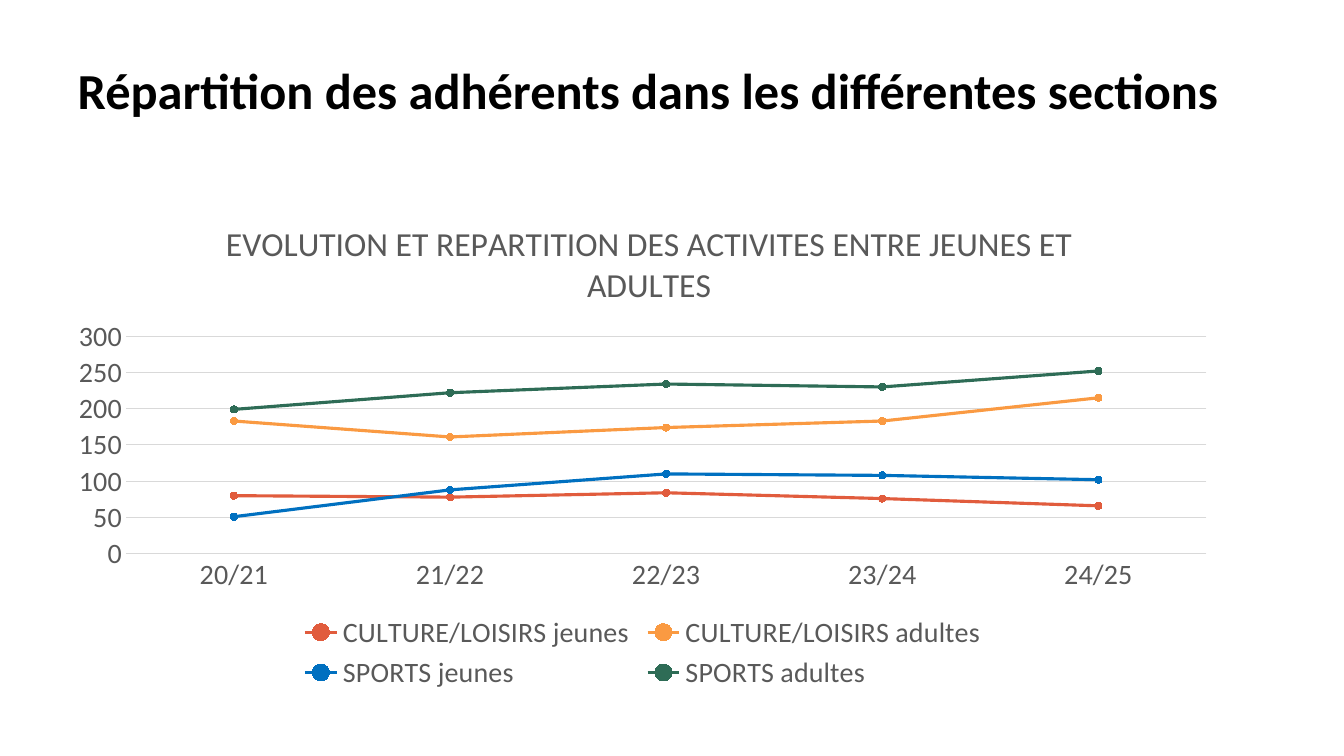
from dataclasses import dataclass

from pptx import Presentation
from pptx.chart.data import CategoryChartData
from pptx.dml.color import RGBColor
from pptx.enum.chart import XL_CHART_TYPE as ChartType
from pptx.enum.chart import XL_LEGEND_POSITION as LegendPosition
from pptx.enum.chart import XL_MARKER_STYLE as MarkerStyle
from pptx.enum.chart import XL_TICK_MARK as TickMark
from pptx.enum.text import MSO_ANCHOR as Anchor
from pptx.enum.text import PP_ALIGN as Align
from pptx.oxml import parse_xml
from pptx.oxml.ns import nsdecls, qn
from pptx.util import Inches, Pt


@dataclass(frozen=True)
class Theme:
    """Hold the colours and type sizes of the slide."""
    font: str = "Calibri"
    black: str = "000000"
    grey: str = "595959"
    grid: str = "D9D9D9"
    title_size: int = 36
    chart_title_size: int = 24
    label_size: int = 20


THEME = Theme()
SEASONS = ["20/21", "21/22", "22/23", "23/24", "24/25"]
SECTIONS = [
    ("CULTURE/LOISIRS jeunes", (80, 78, 84, 76, 66), "E15C3D"),
    ("CULTURE/LOISIRS adultes", (183, 161, 174, 183, 215), "FA9A42"),
    ("SPORTS jeunes", (51, 88, 110, 108, 102), "0070C0"),
    ("SPORTS adultes", (199, 222, 234, 230, 252), "2E6C56"),
]


def style_font(font, size, color, bold=False):
    """Apply the theme typeface with a size, colour and weight."""
    font.name = THEME.font
    font.size = Pt(size)
    font.bold = bold
    font.color.rgb = RGBColor.from_string(color)


def write_text(frame, text, *, size, color, bold=False, align=Align.LEFT, spacing=None):
    """Write one formatted paragraph into a text frame."""
    paragraph = frame.paragraphs[0]
    paragraph.alignment = align
    paragraph.line_spacing = spacing
    run = paragraph.add_run()
    run.text = text
    style_font(run.font, size, color, bold)


def style_line(line, color, width):
    """Give a line a solid colour and a width in points."""
    line.color.rgb = RGBColor.from_string(color)
    line.width = Pt(width)


def place_part(element, index, **fractions):
    """Position a chart part by fractions of the chart area."""
    for layout in element.findall(qn("c:layout")):
        element.remove(layout)
    target = '<c:layoutTarget val="inner"/>' if "w" in fractions else ""
    modes = '<c:xMode val="edge"/><c:yMode val="edge"/>'
    sizes = "".join(f'<c:{name} val="{value}"/>' for name, value in fractions.items())
    element.insert(index, parse_xml(
        f'<c:layout {nsdecls("c")}><c:manualLayout>{target}{modes}{sizes}'
        "</c:manualLayout></c:layout>"))


def add_title(slide, text):
    """Move and fill the title placeholder."""
    title = slide.shapes.title
    title.left, title.top = Inches(0.67), Inches(0.6)
    title.width, title.height = Inches(11.65), Inches(1.24)
    frame = title.text_frame
    frame.word_wrap = True
    frame.vertical_anchor = Anchor.TOP
    write_text(frame, text, size=THEME.title_size, color=THEME.black, bold=True, spacing=0.9)


def style_axes(chart):
    """Format both axes and the horizontal gridlines."""
    for axis in (chart.category_axis, chart.value_axis):
        axis.major_tick_mark = axis.minor_tick_mark = TickMark.NONE
        style_font(axis.tick_labels.font, THEME.label_size, THEME.grey)
    style_line(chart.category_axis.format.line, THEME.grid, 0.75)
    values = chart.value_axis
    values.minimum_scale, values.maximum_scale, values.major_unit = 0, 300, 50
    values.format.line.fill.background()
    values.has_major_gridlines = True
    style_line(values.major_gridlines.format.line, THEME.grid, 0.75)


def style_series(series, color):
    """Draw a series as a straight line with round markers."""
    series.smooth = False
    style_line(series.format.line, color, 2.25)
    marker = series.marker
    marker.style, marker.size = MarkerStyle.CIRCLE, 5
    marker.format.fill.solid()
    marker.format.fill.fore_color.rgb = RGBColor.from_string(color)
    style_line(marker.format.line, color, 0.75)


def add_line_chart(slide, title):
    """Add the chart of members by section and season."""
    data = CategoryChartData()
    data.categories = SEASONS
    for name, values, _ in SECTIONS:
        data.add_series(name, values)
    chart = slide.shapes.add_chart(
        ChartType.LINE_MARKERS, Inches(0.55), Inches(1.88), Inches(11.65), Inches(5.02), data).chart
    style_font(chart.font, THEME.label_size, THEME.black)
    chart.plots[0].vary_by_categories = False
    chart.has_title = True
    write_text(chart.chart_title.text_frame, title, size=THEME.chart_title_size,
               color=THEME.grey, align=Align.CENTER)
    place_part(chart.chart_title._element, 1, x=0.14, y=0.05)
    style_axes(chart)
    for series, (_, _, color) in zip(chart.plots[0].series, SECTIONS):
        style_series(series, color)
    place_part(chart._chartSpace.chart.plotArea, 0, x=0.06, y=0.29, w=0.92, h=0.43)
    chart.has_legend = True
    chart.legend.position = LegendPosition.BOTTOM
    chart.legend.include_in_layout = False
    style_font(chart.legend.font, THEME.label_size, THEME.grey)


def main():
    """Build and save the slide."""
    presentation = Presentation()
    presentation.slide_width, presentation.slide_height = Inches(13.33), Inches(7.5)
    slide = presentation.slides.add_slide(presentation.slide_layouts[5])
    add_title(slide, "Répartition des adhérents dans les différentes sections")
    add_line_chart(slide, "EVOLUTION ET REPARTITION DES ACTIVITES ENTRE JEUNES ET ADULTES")
    presentation.save("out.pptx")


if __name__ == "__main__":
    main()
